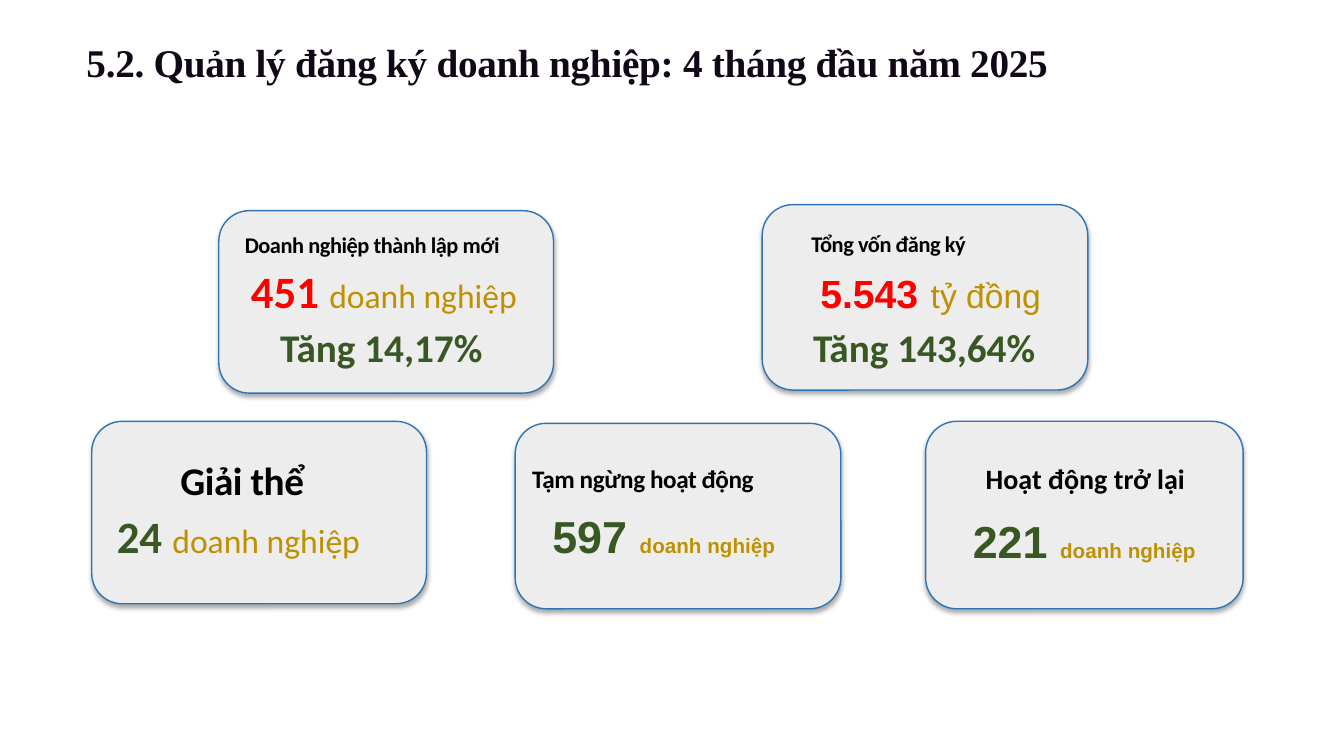
import pptx
import pptx.util
import pptx.dml.color
import pptx.enum.shapes
import pptx.enum.text
import pptx.oxml
import pptx.oxml.ns

Inches = pptx.util.Inches
Pt = pptx.util.Pt
RGBColor = pptx.dml.color.RGBColor

BLACK = RGBColor(0x00, 0x00, 0x00)
INK = RGBColor(0x10, 0x07, 0x17)
RED = RGBColor(0xFF, 0x00, 0x00)
GREEN = RGBColor(0x38, 0x57, 0x23)
GOLD = RGBColor(0xBF, 0x90, 0x00)
CARD_FILL = RGBColor(0xED, 0xED, 0xED)
CARD_LINE = RGBColor(0x2E, 0x75, 0xB6)

LEFT = pptx.enum.text.PP_ALIGN.LEFT
CENTER = pptx.enum.text.PP_ALIGN.CENTER

SHADOW = (
    f'<a:effectLst {pptx.oxml.ns.nsdecls("a")}>'
    '<a:outerShdw blurRad="44450" dist="27940" dir="5400000" algn="ctr" rotWithShape="0">'
    '<a:srgbClr val="000000"><a:alpha val="32000"/></a:srgbClr>'
    '</a:outerShdw></a:effectLst>'
)


def add_card(slide, left, top, width, height):
    """Add a grey rounded card with a soft shadow below it."""
    card = slide.shapes.add_shape(
        pptx.enum.shapes.MSO_SHAPE.ROUNDED_RECTANGLE,
        Inches(left), Inches(top), Inches(width), Inches(height))
    card.fill.solid()
    card.fill.fore_color.rgb = CARD_FILL
    card.line.color.rgb = CARD_LINE
    card.line.width = Pt(1)
    card._element.spPr.append(pptx.oxml.parse_xml(SHADOW))


def add_paragraph_box(slide, left, top, width, height, font, align=LEFT, wrap=True):
    """Add a one-paragraph text box and return its paragraph."""
    box = slide.shapes.add_textbox(Inches(left), Inches(top), Inches(width), Inches(height))
    box.text_frame.word_wrap = wrap
    paragraph = box.text_frame.paragraphs[0]
    paragraph.alignment = align
    paragraph.font.name = font
    return paragraph


def add_label(slide, box, text, size, color=BLACK, font="Calibri", align=LEFT, spacing=0):
    """Add a bold line of text, with letter spacing in points."""
    paragraph = add_paragraph_box(slide, *box, font, align)
    paragraph.font.size = Pt(size)
    paragraph.font.bold = True
    paragraph.font.color.rgb = color
    run = paragraph.add_run()
    run.text = text
    if spacing:
        run._r.get_or_add_rPr().set("spc", str(round(spacing * 100)))


def add_figure(slide, box, font, pieces, align=LEFT, wrap=True):
    """Add a number and its unit, each piece as text, size, colour and bold."""
    paragraph = add_paragraph_box(slide, *box, font, align, wrap)
    for text, size, color, bold in pieces:
        run = paragraph.add_run()
        run.text = text
        run.font.size = Pt(size)
        run.font.bold = bold
        run.font.color.rgb = color


def main():
    """Build the business registration slide."""
    presentation = pptx.Presentation()
    presentation.slide_width = Inches(13.33)
    presentation.slide_height = Inches(7.5)
    slide = presentation.slides.add_slide(presentation.slide_layouts[6])

    add_label(slide, (0.76, 0.33, 12.17, 0.57),
              "5.2. Quản lý đăng ký doanh nghiệp: 4 tháng đầu năm 2025",
              28, INK, "Times New Roman", spacing=-0.2)

    for card in ((2.17, 2.09, 3.32, 1.81), (7.56, 2.03, 3.23, 1.84),
                 (0.91, 4.18, 3.32, 1.81), (5.11, 4.2, 3.23, 1.84),
                 (9.18, 4.18, 3.15, 1.86)):
        add_card(slide, *card)

    unit = "doanh nghiệp"
    large_unit = (unit, 24, GOLD, False)
    small_unit = (unit, 14.7, GOLD, True)

    add_label(slide, (2.33, 2.24, 3.16, 0.47), "Doanh nghiệp thành lập mới", 16, spacing=-0.3)
    add_figure(slide, (2.39, 2.57, 3.25, 0.64), "Calibri", [("451 ", 32, RED, True), large_unit])
    add_label(slide, (2.68, 3.16, 2.41, 0.57), "Tăng 14,17%", 28, GREEN)

    add_label(slide, (7.95, 2.23, 2.35, 0.64), "Tổng vốn đăng ký", 16, spacing=-0.3)
    add_figure(slide, (7.86, 2.57, 2.74, 0.64), "Arial",
               [("5.543", 28, RED, True), (" ", 32, GREEN, True), ("tỷ đồng", 24, GOLD, False)],
               CENTER)
    add_label(slide, (7.84, 3.16, 2.65, 0.57), "Tăng 143,64%", 28, GREEN, align=CENTER)

    add_label(slide, (1.69, 4.48, 1.89, 0.84), "Giải thể", 28, spacing=-0.3)
    add_figure(slide, (1.06, 5, 2.99, 0.64), "Calibri", [("24 ", 32, GREEN, True), large_unit])

    add_label(slide, (5.18, 4.55, 3.21, 0.67), "Tạm ngừng hoạt động", 18, spacing=-0.3)
    add_figure(slide, (5.38, 5, 2.76, 0.64), "Arial", [("597 ", 32, GREEN, True), small_unit])

    add_label(slide, (9.51, 4.53, 2.51, 0.71), "Hoạt động trở lại", 20, align=CENTER)
    add_figure(slide, (9.55, 5.05, 2.41, 0.64), "Arial",
               [("221 ", 32, GREEN, True), small_unit], wrap=False)

    presentation.save("out.pptx")


if __name__ == "__main__":
    main()
